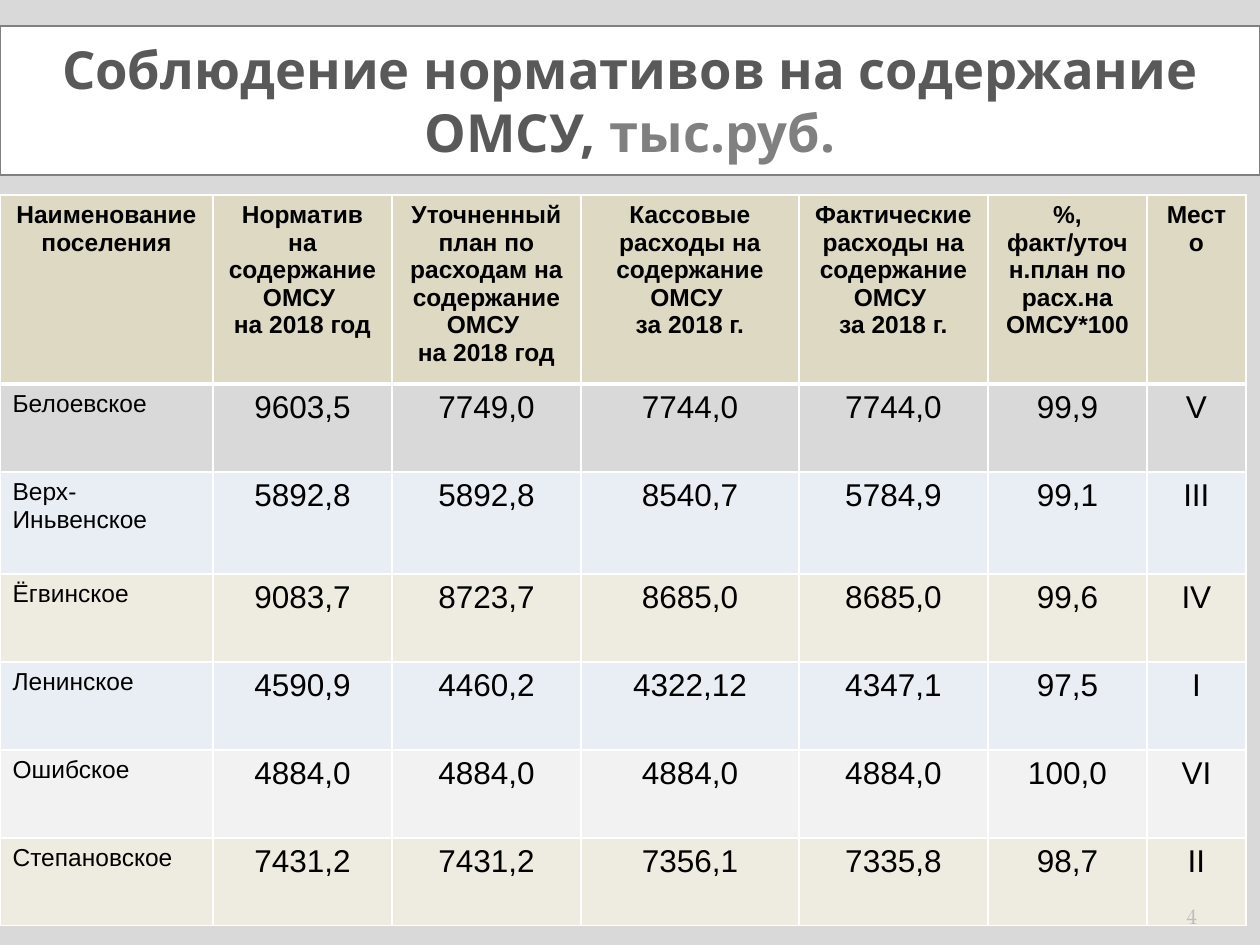
from dataclasses import dataclass

from lxml.etree import SubElement
from pptx import Presentation
from pptx.dml.color import RGBColor
from pptx.enum.shapes import MSO_SHAPE
from pptx.enum.text import MSO_ANCHOR, PP_ALIGN
from pptx.oxml.ns import qn
from pptx.util import Emu, Pt

EMU_PER_PX = 914400 / 126

COLORS = {
    "background": "D9D9D9", "white": "FFFFFF", "outline": "808080",
    "title": "595959", "unit": "808080", "text": "000000", "number": "BDBDBD",
    "header": "DDD9C3", "gray": "D9D9D9", "blue": "E9EDF4",
    "sand": "EEECE1", "light": "F2F2F2",
}

TITLE = {"name": "Noto Sans", "size": Pt(30), "bold": True}
HEADER = {"name": "Arial", "size": Pt(14), "bold": True}
NAME = {"name": "Arial", "size": Pt(14), "bold": False}
VALUE = {"name": "Arial", "size": Pt(18), "bold": False}
NUMBER = {"name": "TeX Gyre Pagella", "size": Pt(12), "bold": False}


@dataclass
class Column:
    width: int
    heading: tuple[str, ...]


@dataclass
class Settlement:
    fill: str
    height: int
    cells: tuple[str, ...]


COLUMNS = [
    Column(213, ("Наименование поселения",)),
    Column(179, ("Норматив на содержание ОМСУ ", "на 2018 год")),
    Column(189, ("Уточненный план по расходам на содержание ОМСУ ", "на 2018 год")),
    Column(218, ("Кассовые расходы на содержание ОМСУ ", "за 2018 г.")),
    Column(189, ("Фактические расходы на содержание ОМСУ ", "за 2018 г.")),
    Column(159, ("%, факт/уточн.план по расх.на ОМСУ*100",)),
    Column(99, ("Место",)),
]
HEADER_HEIGHT = 189
SETTLEMENTS = [
    Settlement("gray", 88, ("Белоевское", "9603,5", "7749,0", "7744,0", "7744,0", "99,9", "V")),
    Settlement("blue", 102, ("Верх-Иньвенское", "5892,8", "5892,8", "8540,7", "5784,9", "99,1", "III")),
    Settlement("sand", 88, ("Ёгвинское", "9083,7", "8723,7", "8685,0", "8685,0", "99,6", "IV")),
    Settlement("blue", 88, ("Ленинское", "4590,9", "4460,2", "4322,12", "4347,1", "97,5", "I")),
    Settlement("light", 88, ("Ошибское", "4884,0", "4884,0", "4884,0", "4884,0", "100,0", "VI")),
    Settlement("sand", 88, ("Степановское", "7431,2", "7431,2", "7356,1", "7335,8", "98,7", "II")),
]


def px(value: int) -> Emu:
    return Emu(round(value * EMU_PER_PX))


def rgb(name: str) -> RGBColor:
    return RGBColor.from_string(COLORS[name])


def add_run(p, text: str, style: dict, color: str) -> None:
    r = p.add_run()
    r.text = text
    for key, value in style.items():
        setattr(r.font, key, value)
    r.font.color.rgb = rgb(color)


def set_borders(cell, top: int, bottom: int) -> None:
    tcPr = cell._tc.get_or_add_tcPr()
    for side, points in (("L", 1), ("R", 1), ("T", top), ("B", bottom)):
        ln = SubElement(tcPr, qn(f"a:ln{side}"), w=str(Pt(points)))
        fill = SubElement(ln, qn("a:solidFill"))
        SubElement(fill, qn("a:srgbClr"), val=COLORS["white"])


def fill_cell(cell, lines: tuple[str, ...], style: dict, align: PP_ALIGN,
              fill: str, top: int = 1, bottom: int = 1) -> None:
    set_borders(cell, top, bottom)
    cell.fill.solid()
    cell.fill.fore_color.rgb = rgb(fill)
    tf = cell.text_frame
    for i, line in enumerate(lines):
        p = tf.add_paragraph() if i else tf.paragraphs[0]
        p.alignment = align
        add_run(p, line, style, "text")


def add_title(s) -> None:
    sp = s.shapes.add_shape(MSO_SHAPE.RECTANGLE, 0, px(26), px(1260), px(149))
    sp.shadow.inherit = False
    sp.fill.solid()
    sp.fill.fore_color.rgb = rgb("white")
    sp.line.color.rgb = rgb("outline")
    sp.line.width = Pt(0.75)
    tf = sp.text_frame
    tf.word_wrap = True
    tf.vertical_anchor = MSO_ANCHOR.MIDDLE
    p = tf.paragraphs[0]
    p.alignment = PP_ALIGN.CENTER
    add_run(p, "Соблюдение нормативов на содержание ОМСУ, ", TITLE, "title")
    add_run(p, "тыс.руб.", TITLE, "unit")


def add_spending_table(s) -> None:
    heights = [HEADER_HEIGHT] + [row.height for row in SETTLEMENTS]
    widths = [column.width for column in COLUMNS]
    table = s.shapes.add_table(len(heights), len(widths), 0, px(195),
                               px(sum(widths)), px(sum(heights))).table
    table.first_row = table.horz_banding = False
    for row, height in zip(table.rows, heights):
        row.height = px(height)

    # Header row
    for c, column in enumerate(COLUMNS):
        table.columns[c].width = px(column.width)
        fill_cell(table.cell(0, c), column.heading, HEADER, PP_ALIGN.CENTER,
                  "header", bottom=3)

    # Settlement rows
    for i, row in enumerate(SETTLEMENTS, start=1):
        for c, text in enumerate(row.cells):
            style, align = (VALUE, PP_ALIGN.CENTER) if c else (NAME, PP_ALIGN.LEFT)
            fill_cell(table.cell(i, c), (text,), style, align, row.fill,
                      top=3 if i == 1 else 1)


def add_slide_number(s) -> None:
    tf = s.shapes.add_textbox(px(1092), px(885), px(105), px(50)).text_frame
    layout = {"word_wrap": True, "vertical_anchor": MSO_ANCHOR.BOTTOM,
              "margin_left": 0, "margin_right": 0}
    for key, value in layout.items():
        setattr(tf, key, value)
    p = tf.paragraphs[0]
    p.alignment = PP_ALIGN.RIGHT
    add_run(p, "4", NUMBER, "number")


def main() -> None:
    prs = Presentation()
    prs.slide_width, prs.slide_height = px(1260), px(945)
    s = prs.slides.add_slide(prs.slide_layouts[6])
    s.background.fill.solid()
    s.background.fill.fore_color.rgb = rgb("background")
    add_title(s)
    add_spending_table(s)
    add_slide_number(s)
    prs.save("out.pptx")


if __name__ == "__main__":
    main()
